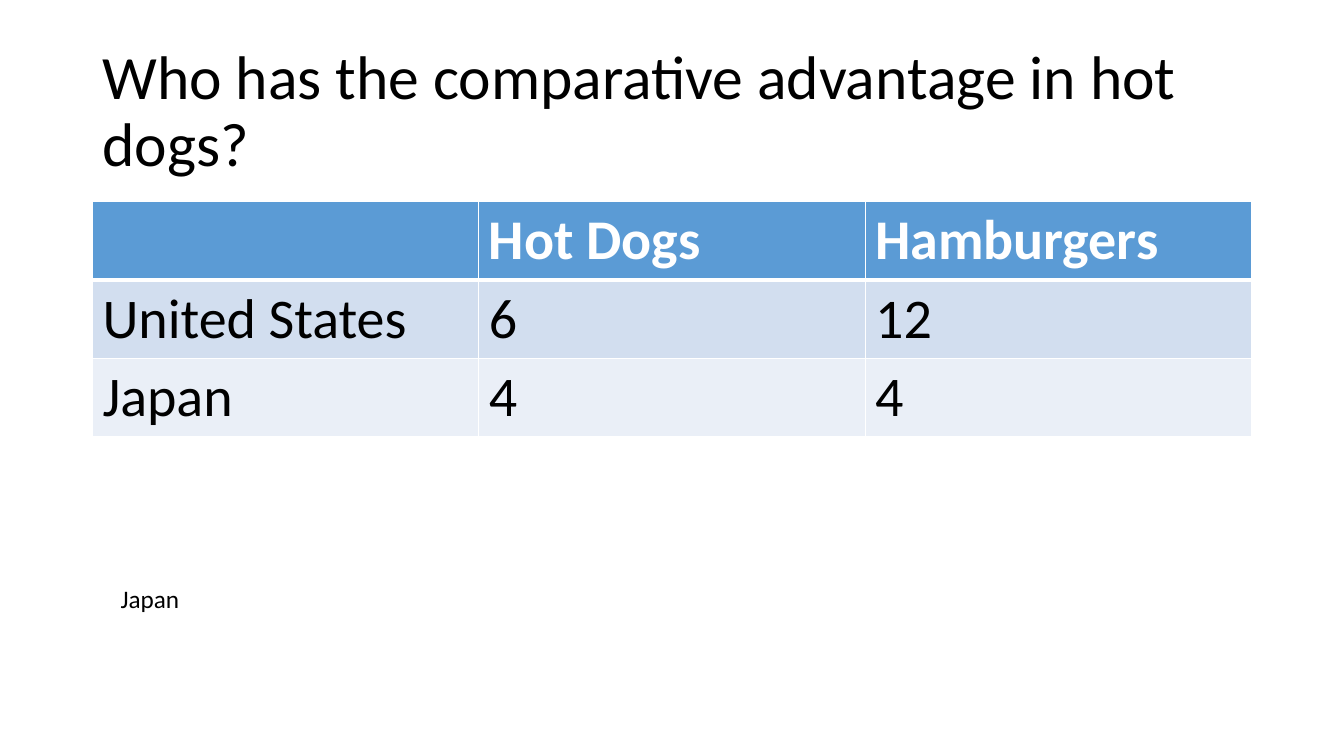
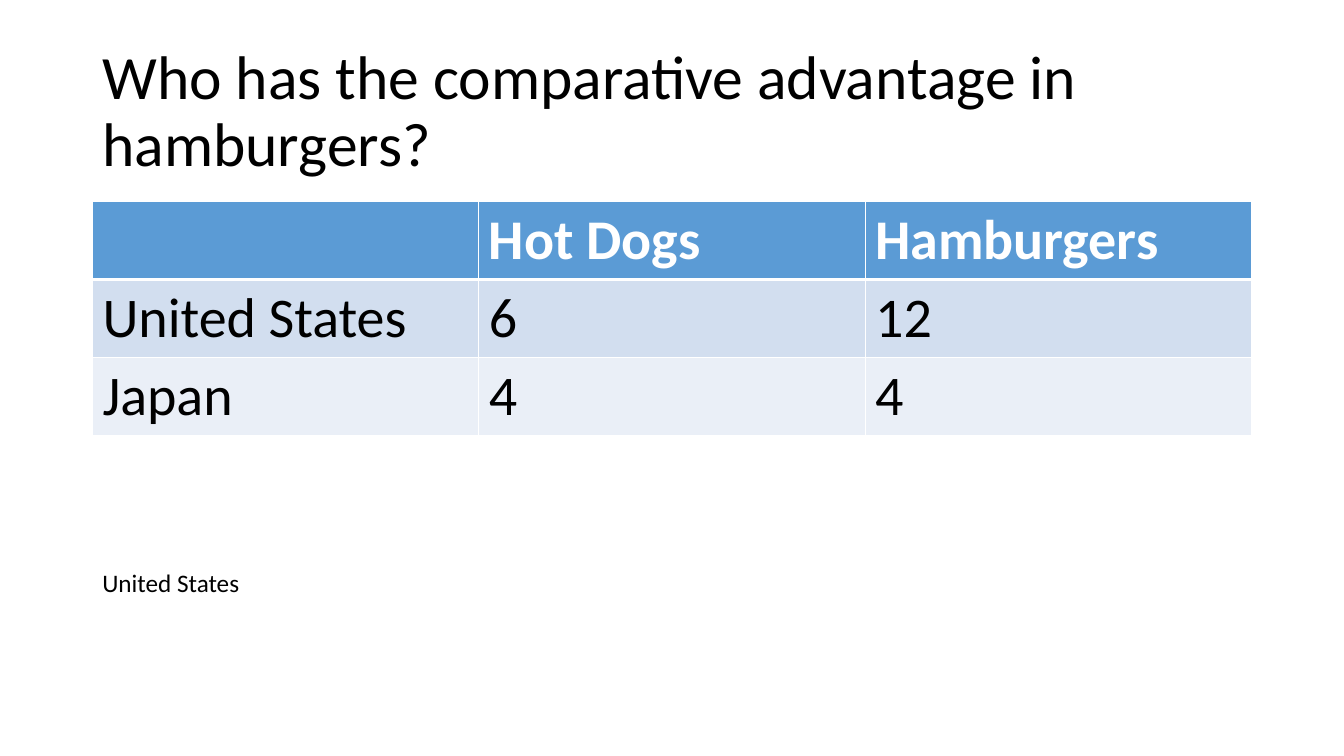
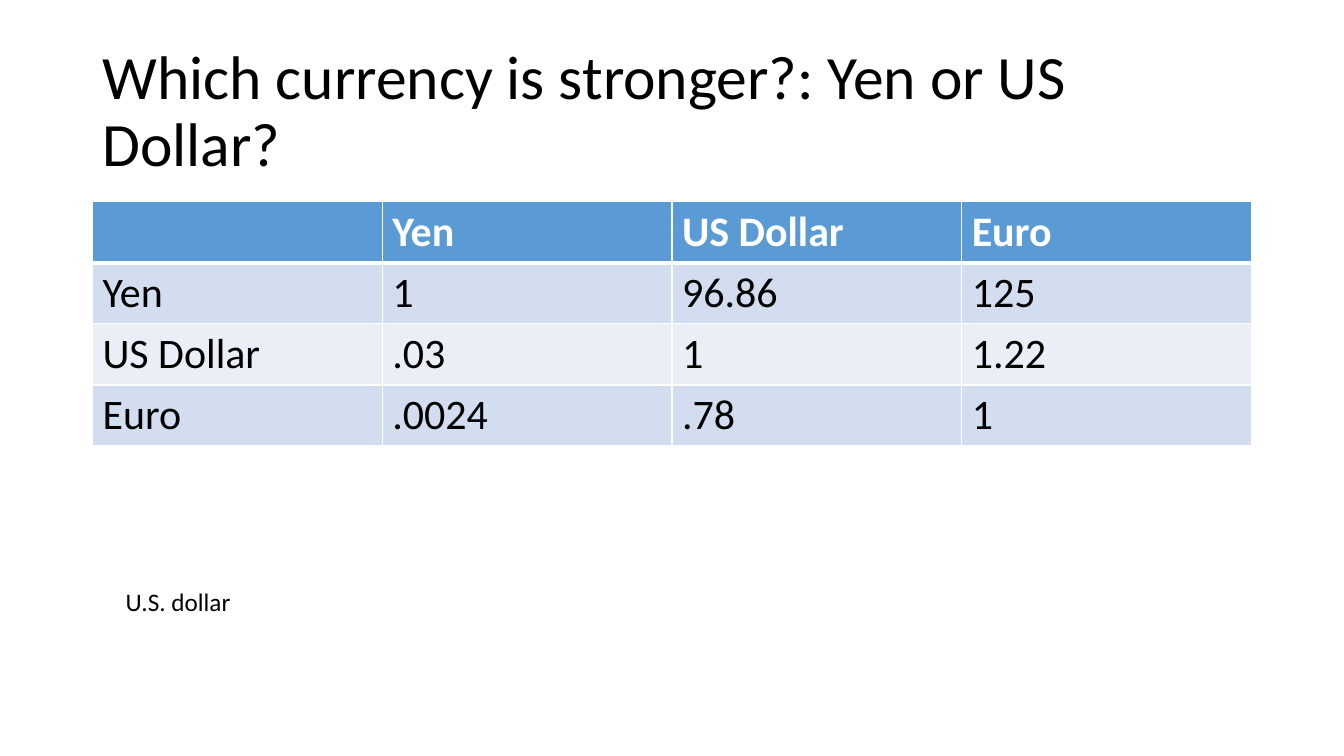
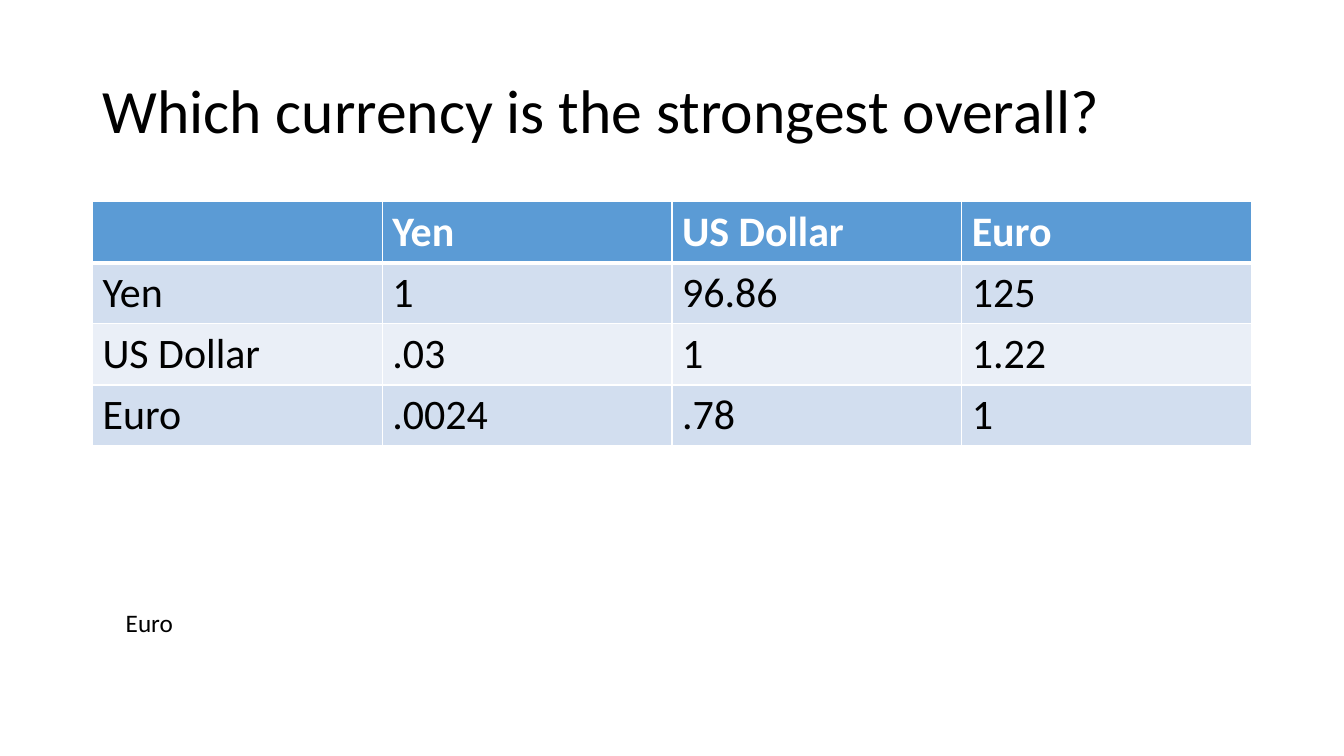
"""Build four quiz slides on comparative advantage and currency strength."""
from dataclasses import dataclass

from lxml import etree
from pptx import Presentation
from pptx import util as u
from pptx.dml import color
from pptx.enum import text
from pptx.oxml import ns


@dataclass(frozen=True)
class Theme:
    font: str = "Calibri"
    ink: str = "000000"
    paper: str = "FFFFFF"
    header: str = "5B9BD5"
    bands: tuple = ("D2DEEF", "EAEFF7")
    title_size: int = 44
    answer_size: int = 18
    rule: int = 1
    header_rule: int = 3


THEME = Theme()
LEFT, WIDTH = 2.33, 29.21
TITLE_TOP, TITLE_HEIGHT = 1.01, 3.68
TABLE_TOP = 5.08
ANSWER_HEIGHT = 1.03

OUTPUT = {
    "rows": [
        ("", "Hot Dogs", "Hamburgers"),
        ("United States", "6", "12"),
        ("Japan", "4", "4"),
    ],
    "size": 40,
    "height": 5.9,
}
EXCHANGE = {
    "rows": [
        ("", "Yen", "US Dollar", "Euro"),
        ("Yen", "1", "96.86", "125"),
        ("US Dollar", ".03", "1", "1.22"),
        ("Euro", ".0024", ".78", "1"),
    ],
    "size": 30,
    "height": 6.16,
}
QUESTIONS = [
    ("Who has the comparative advantage in hot dogs?", OUTPUT, "Japan", (2.79, 14.58, 7.01)),
    ("Who has the comparative advantage in hamburgers?", OUTPUT, "United States", (LEFT, 14.17, 8.99)),
    ("Which currency is stronger?: Yen or US Dollar?", EXCHANGE, "U.S. dollar", (2.92, 14.66, 6.2)),
    ("Which currency is the strongest overall?", EXCHANGE, "Euro", (2.92, 15.19, 2.92)),
]


def write(frame, words, *, size, ink=THEME.ink, bold=False, spacing=None):
    paragraph = frame.paragraphs[0]
    paragraph.line_spacing = spacing
    font = paragraph.font
    if words:
        run = paragraph.add_run()
        run.text = words
        font = run.font
    font.name, font.size, font.bold = THEME.font, u.Pt(size), bold
    font.color.rgb = color.RGBColor.from_string(ink)


def add_text(slide, box, words, *, anchor=text.MSO_ANCHOR.TOP,
             fit=text.MSO_AUTO_SIZE.NONE, **style):
    frame = slide.shapes.add_textbox(*map(u.Cm, box)).text_frame
    frame.word_wrap = True
    frame.vertical_anchor = anchor
    frame.auto_size = fit
    write(frame, words, **style)


def add_borders(cell, top, bottom):
    properties = cell._tc.get_or_add_tcPr()
    sides = {"lnL": THEME.rule, "lnR": THEME.rule, "lnT": top, "lnB": bottom}
    for side, points in sides.items():
        line = etree.SubElement(properties, ns.qn(f"a:{side}"), w=str(u.Pt(points)))
        paint = etree.SubElement(line, ns.qn("a:solidFill"))
        etree.SubElement(paint, ns.qn("a:srgbClr"), val=THEME.paper)


def add_grid(slide, rows, size, height):
    box = map(u.Cm, (LEFT, TABLE_TOP, WIDTH, height))
    grid = slide.shapes.add_table(len(rows), len(rows[0]), *box).table
    for r, row in enumerate(rows):
        heading = r == 0
        shade = THEME.header if heading else THEME.bands[(r - 1) % 2]
        top = THEME.header_rule if r == 1 else THEME.rule
        bottom = THEME.header_rule if heading else THEME.rule
        for c, words in enumerate(row):
            cell = grid.cell(r, c)
            add_borders(cell, top, bottom)
            cell.fill.solid()
            cell.fill.fore_color.rgb = color.RGBColor.from_string(shade)
            write(cell.text_frame, words, size=size, bold=heading,
                  ink=THEME.paper if heading else THEME.ink)


def main():
    deck = Presentation()
    deck.slide_width, deck.slide_height = u.Cm(33.87), u.Cm(19.05)
    for question, grid, answer, (left, top, width) in QUESTIONS:
        slide = deck.slides.add_slide(deck.slide_layouts[6])
        add_text(slide, (LEFT, TITLE_TOP, WIDTH, TITLE_HEIGHT), question,
                 size=THEME.title_size, spacing=0.9, anchor=text.MSO_ANCHOR.MIDDLE)
        add_grid(slide, **grid)
        add_text(slide, (left, top, width, ANSWER_HEIGHT), answer,
                 size=THEME.answer_size, fit=text.MSO_AUTO_SIZE.SHAPE_TO_FIT_TEXT)
    deck.save("out.pptx")


if __name__ == "__main__":
    main()
